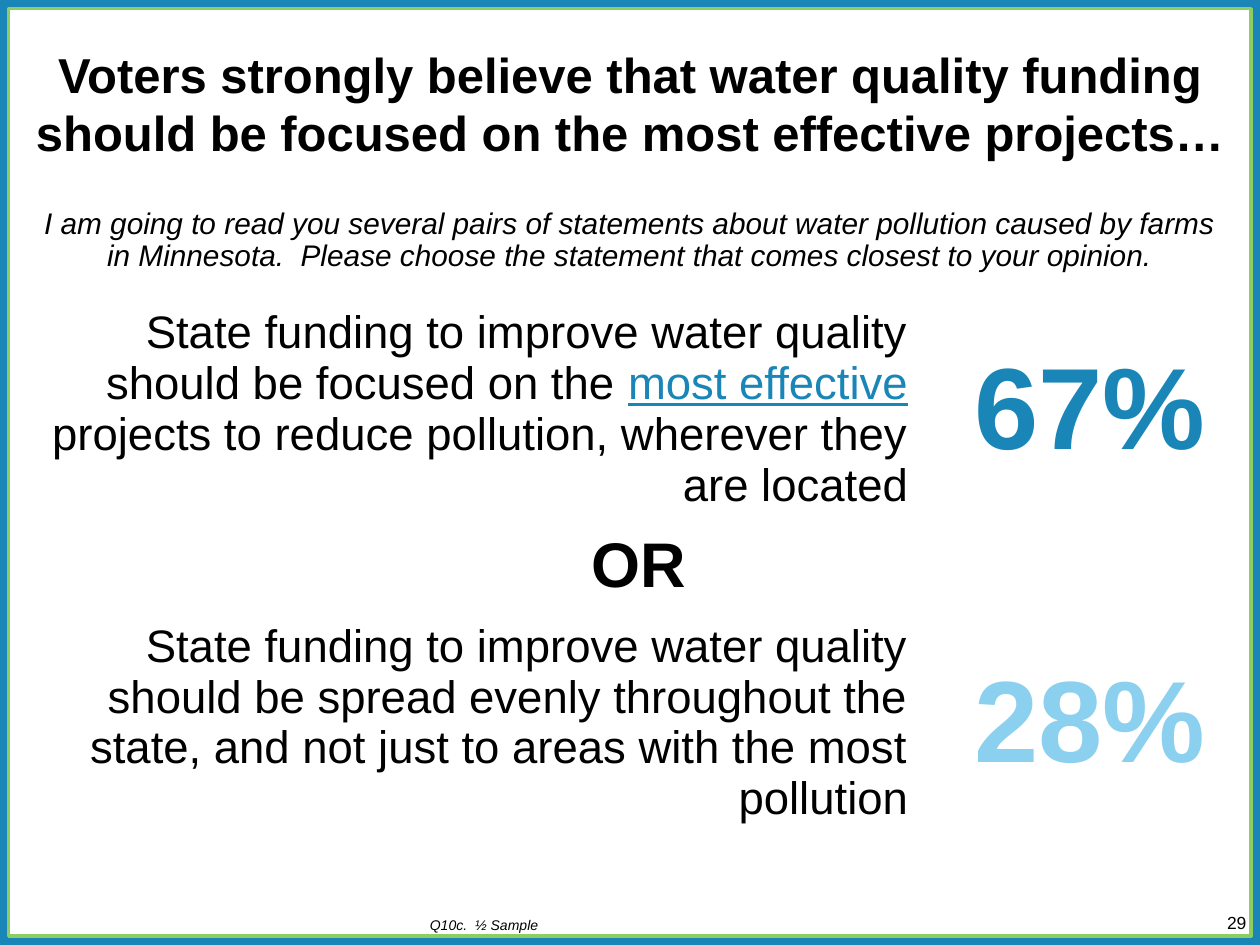
from pptx import Presentation
from pptx.dml.color import RGBColor
from pptx.enum.shapes import MSO_SHAPE
from pptx.enum.text import MSO_ANCHOR, PP_ALIGN
from pptx.util import Pt

LEFT, CENTER, RIGHT = PP_ALIGN.LEFT, PP_ALIGN.CENTER, PP_ALIGN.RIGHT
TOP, MIDDLE, BOTTOM = MSO_ANCHOR.TOP, MSO_ANCHOR.MIDDLE, MSO_ANCHOR.BOTTOM
BLUE, LIGHT_BLUE, GREEN = "1986B7", "8BD0EF", "8CCE62"
WHITE, BLACK = "FFFFFF", "000000"


def color(value):
    return RGBColor.from_string(value)


def write(frame, text, size=26, fill=BLACK, bold=False, italic=False,
          align=LEFT, spacing=1.0, emphasis=None):
    """Write one paragraph; the emphasis phrase is blue and underlined."""
    frame.word_wrap = True
    paragraph = frame.paragraphs[0]
    paragraph.alignment = align
    paragraph.line_spacing = spacing
    pieces = [text]
    if emphasis:
        before, after = text.split(emphasis)
        pieces = [before, emphasis, after]
    for piece in pieces:
        run = paragraph.add_run()
        run.text = piece
        font = run.font
        font.name, font.size = "Arial", Pt(size)
        font.bold, font.italic = bold, italic
        font.underline = piece == emphasis
        font.color.rgb = color(BLUE if piece == emphasis else fill)


presentation = Presentation()
presentation.slide_width, presentation.slide_height = Pt(720), Pt(540)
slide = presentation.slides.add_slide(presentation.slide_layouts[6])

# Blue background with a green-edged white panel
background = slide.background.fill
background.solid()
background.fore_color.rgb = color(BLUE)
panel = slide.shapes.add_shape(MSO_SHAPE.RECTANGLE, Pt(5), Pt(5), Pt(710), Pt(530))
panel.shadow.inherit = False
panel.fill.solid()
panel.fill.fore_color.rgb = color(WHITE)
panel.line.color.rgb = color(GREEN)
panel.line.width = Pt(2)

# Page number, title, introduction and footnote
texts = [
    ((641.5, 517.7, 77.8, 19.4), TOP, "29", dict(size=10, align=RIGHT)),
    ((12, 21.6, 696, 90), TOP,
     "Voters strongly believe that water quality funding should be focused "
     "on the most effective projects…",
     dict(size=28, bold=True, align=CENTER)),
    ((17, 116, 686, 45), TOP,
     "I am going to read you several pairs of statements about water pollution "
     "caused by farms in Minnesota.  Please choose the statement that comes "
     "closest to your opinion.",
     dict(size=17, italic=True, align=CENTER, spacing=0.9)),
    ((238.5, 502, 454.3, 35), BOTTOM, "Q10c.  ½ Sample", dict(size=8, italic=True)),
]
for box, anchor, text, style in texts:
    text_box = slide.shapes.add_textbox(*map(Pt, box))
    text_box.text_frame.vertical_anchor = anchor
    write(text_box.text_frame, text, **style)

# Statement table
column_widths, row_heights = (516, 186), (123, 52.3, 123)
table = slide.shapes.add_table(3, 2, Pt(10.2), Pt(170.6), Pt(sum(column_widths)),
                               Pt(sum(row_heights))).table
table.first_row = table.horz_banding = False
for column, width in zip(table.columns, column_widths):
    column.width = Pt(width)
for row, height in zip(table.rows, row_heights):
    row.height = Pt(height)
for cell in table.iter_cells():
    cell.fill.background()
    cell.vertical_anchor = MIDDLE
    cell.margin_left, cell.margin_right = Pt(14.4), Pt(7.2)
    cell.margin_top = cell.margin_bottom = Pt(1)
table.cell(1, 0).merge(table.cell(1, 1))

statements = [
    (0, "State funding to improve water quality should be focused on the most "
        "effective projects to reduce pollution, wherever they are located",
     "most effective", "67%", BLUE),
    (2, "State funding to improve water quality should be spread evenly throughout "
        "the state, and not just to areas with the most pollution",
     None, "28%", LIGHT_BLUE),
]
for row, statement, emphasis, share, fill in statements:
    write(table.cell(row, 0).text_frame, statement, align=RIGHT, emphasis=emphasis)
    write(table.cell(row, 1).text_frame, share, size=66, fill=fill, bold=True, align=CENTER)
write(table.cell(1, 0).text_frame, "OR", size=36, bold=True, align=CENTER)

presentation.save("out.pptx")
